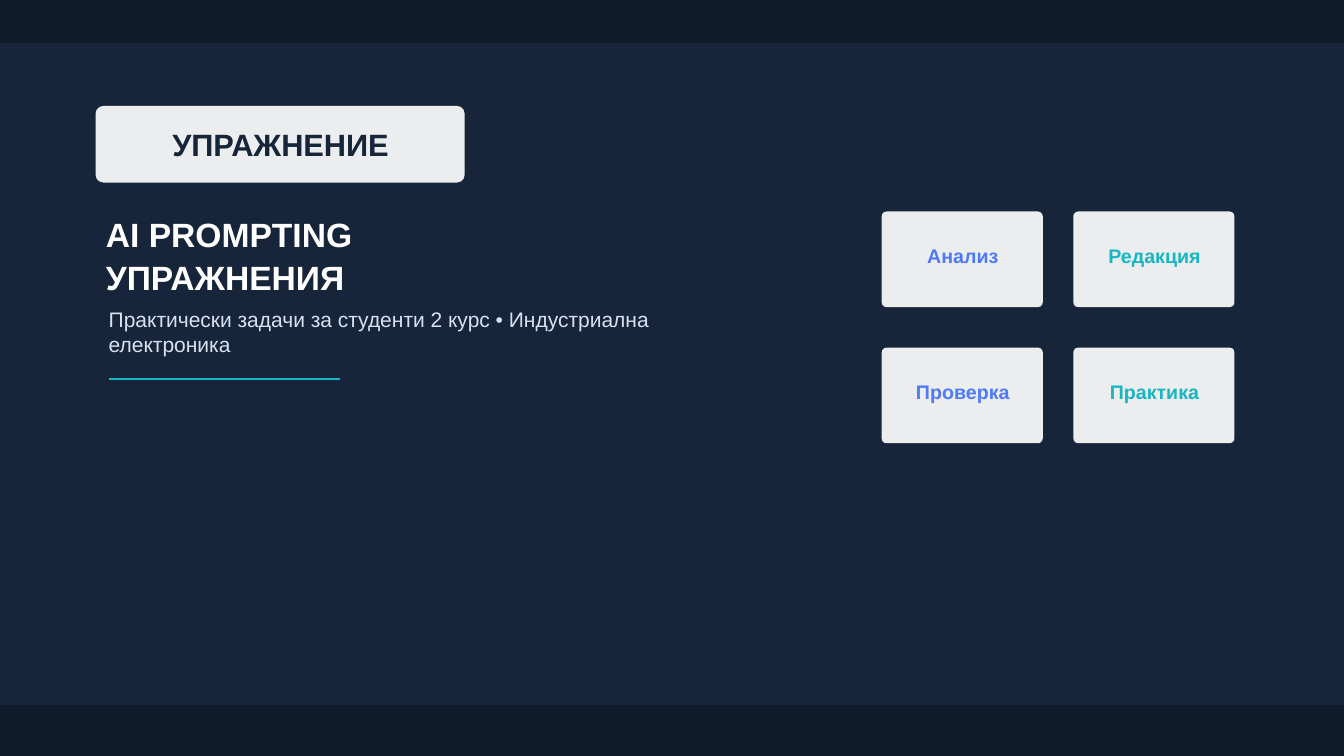
from dataclasses import dataclass

from lxml import etree
from pptx import Presentation
from pptx.dml.color import RGBColor
from pptx.enum.shapes import MSO_CONNECTOR, MSO_SHAPE
from pptx.enum.text import MSO_ANCHOR, PP_ALIGN
from pptx.oxml.ns import qn
from pptx.util import Cm, Pt

RECTANGLE = MSO_SHAPE.RECTANGLE
ROUNDED = MSO_SHAPE.ROUNDED_RECTANGLE
STRAIGHT = MSO_CONNECTOR.STRAIGHT
MIDDLE = MSO_ANCHOR.MIDDLE
LEFT, CENTER = PP_ALIGN.LEFT, PP_ALIGN.CENTER


@dataclass(frozen=True)
class Theme:
    font: str = "Arial"
    background: str = "17253A"
    band: str = "0F1A2B"
    panel: str = "FFFFFF"
    panel_opacity: int = 92
    title: str = "FFFFFF"
    subtitle: str = "D7E1F2"
    blue: str = "4E79F7"
    teal: str = "18B6C2"
    badge_size: int = 22
    title_size: int = 24
    subtitle_size: int = 15
    card_size: int = 14


@dataclass(frozen=True)
class Box:
    """A rectangle in centimetres."""
    left: float
    top: float
    width: float
    height: float


@dataclass(frozen=True)
class TextStyle:
    size: int
    color: str
    bold: bool = True
    alignment: PP_ALIGN = CENTER
    line_spacing: float = 1.0


@dataclass(frozen=True)
class Card:
    label: str
    color: str


THEME = Theme()
SLIDE_WIDTH, SLIDE_HEIGHT = 33.87, 19.05
BANDS = (Box(0, 0, SLIDE_WIDTH, 1.07), Box(0, 17.78, SLIDE_WIDTH, 1.27))
CARDS = (
    Card("Анализ", THEME.blue),
    Card("Редакция", THEME.teal),
    Card("Проверка", THEME.blue),
    Card("Практика", THEME.teal),
)
CARD_COLUMNS = 2
CARD_LEFT, CARD_TOP = 22.22, 5.33
CARD_WIDTH, CARD_HEIGHT = 4.06, 2.41
CARD_STEP_X, CARD_STEP_Y = 4.83, 3.43


def add_band(slide, box: Box) -> None:
    shape = slide.shapes.add_shape(
        RECTANGLE, Cm(box.left), Cm(box.top), Cm(box.width), Cm(box.height))
    shape.shadow.inherit = False
    shape.fill.solid()
    shape.fill.fore_color.rgb = RGBColor.from_string(THEME.band)
    shape.line.color.rgb = RGBColor.from_string(THEME.band)
    shape.line.width = Pt(1)


def add_panel(slide, box: Box, corner: float) -> None:
    """Add a translucent rounded panel without an outline."""
    shape = slide.shapes.add_shape(
        ROUNDED, Cm(box.left), Cm(box.top), Cm(box.width), Cm(box.height))
    shape.adjustments[0] = corner
    shape.shadow.inherit = False
    shape.fill.solid()
    shape.fill.fore_color.rgb = RGBColor.from_string(THEME.panel)
    shape.line.fill.background()
    color = shape.fill._xPr.find(qn("a:solidFill")).find(qn("a:srgbClr"))
    etree.SubElement(color, qn("a:alpha"), val=str(THEME.panel_opacity * 1000))


def add_text(slide, box: Box, lines: tuple[str, ...], style: TextStyle) -> None:
    shape = slide.shapes.add_textbox(
        Cm(box.left), Cm(box.top), Cm(box.width), Cm(box.height))
    frame = shape.text_frame
    frame.word_wrap = True
    frame.vertical_anchor = MIDDLE
    frame.margin_left = frame.margin_right = 0
    frame.margin_top = frame.margin_bottom = 0
    frame.text = "\n".join(lines)
    for paragraph in frame.paragraphs:
        paragraph.alignment = style.alignment
        paragraph.line_spacing = style.line_spacing
        paragraph.font.name = THEME.font
        paragraph.font.size = Pt(style.size)
        paragraph.font.bold = style.bold
        paragraph.font.color.rgb = RGBColor.from_string(style.color)


def add_divider(slide, left: float, top: float, length: float) -> None:
    line = slide.shapes.add_connector(
        STRAIGHT, Cm(left), Cm(top), Cm(left + length), Cm(top))
    line.line.color.rgb = RGBColor.from_string(THEME.teal)
    line.line.width = Pt(2)
    etree.SubElement(line._element.spPr, qn("a:effectLst"))


def add_cards(slide) -> None:
    for index, card in enumerate(CARDS):
        row, column = divmod(index, CARD_COLUMNS)
        left = CARD_LEFT + column * CARD_STEP_X
        top = CARD_TOP + row * CARD_STEP_Y
        add_panel(slide, Box(left, top, CARD_WIDTH, CARD_HEIGHT), 0.05)
        add_text(slide, Box(left + 0.46, top + 0.86, 3.17, 0.51),
                 (card.label,), TextStyle(THEME.card_size, card.color))


def main() -> None:
    presentation = Presentation()
    presentation.slide_width = Cm(SLIDE_WIDTH)
    presentation.slide_height = Cm(SLIDE_HEIGHT)
    slide = presentation.slides.add_slide(presentation.slide_layouts[6])
    slide.background.fill.solid()
    slide.background.fill.fore_color.rgb = RGBColor.from_string(THEME.background)

    for band in BANDS:
        add_band(slide, band)
    add_panel(slide, Box(2.41, 2.67, 9.3, 1.93), 0.1)
    add_text(slide, Box(3.63, 3.28, 6.88, 0.71), ("УПРАЖНЕНИЕ",),
             TextStyle(THEME.badge_size, THEME.background))
    add_text(slide, Box(2.67, 4.95, 14.73, 2.92), ("AI PROMPTING", "УПРАЖНЕНИЯ"),
             TextStyle(THEME.title_size, THEME.title, alignment=LEFT,
                       line_spacing=1.06))
    add_text(slide, Box(2.74, 8, 15.75, 0.71),
             ("Практически задачи за студенти 2 курс • Индустриална електроника",),
             TextStyle(THEME.subtitle_size, THEME.subtitle, False, LEFT))
    add_divider(slide, 2.74, 9.55, 5.84)
    add_cards(slide)
    presentation.save("out.pptx")


if __name__ == "__main__":
    main()
